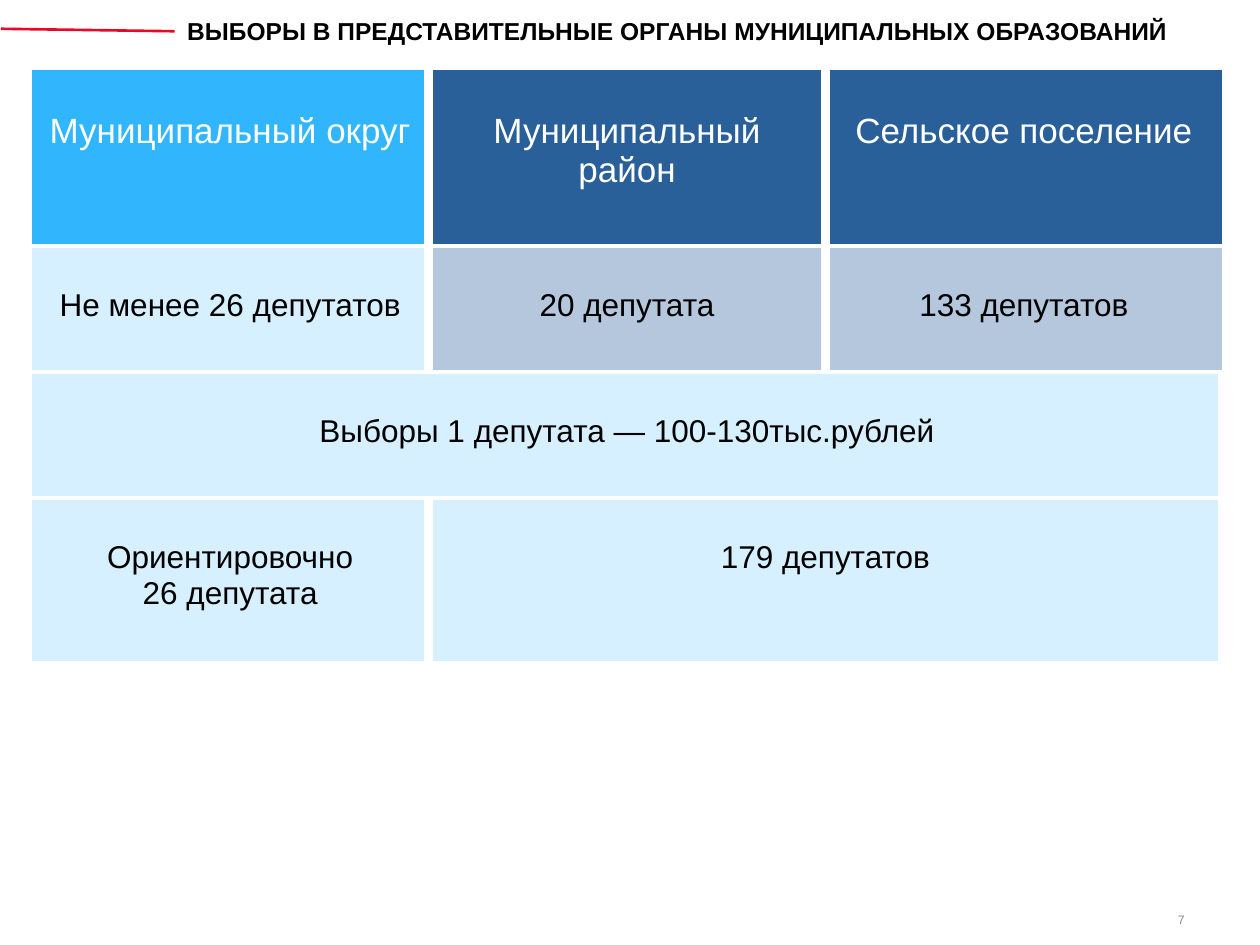
import pptx
import pptx.dml.color
import pptx.enum.text
import pptx.util
from dataclasses import dataclass
from lxml import etree
from pptx.oxml.ns import qn
from pptx.util import Cm


@dataclass(frozen=True)
class Theme:
    font: str = "Arial"
    black: str = "000000"
    white: str = "FFFFFF"
    grey: str = "8B8B8B"
    red: str = "E70927"
    bright: str = "31B6FD"
    navy: str = "2A6099"
    pale: str = "D6F0FF"
    steel: str = "B4C7DC"
    title_size: float = 14
    head_size: float = 20
    body_size: float = 18
    number_size: float = 7
    rule_width: float = 1.5
    outer_border: float = 0.96
    row_border: float = 3
    column_border: float = 6


T = Theme()
ALIGN = pptx.enum.text.PP_ALIGN
ANCHOR = pptx.enum.text.MSO_ANCHOR
COLUMNS = 3
ROW_HEIGHTS = (Cm(3.56), Cm(2.54), Cm(2.54), Cm(3.3))
CELLS = (
    (0, 0, 1, "Муниципальный округ", T.bright),
    (0, 1, 1, "Муниципальный район", T.navy),
    (0, 2, 1, "Сельское поселение", T.navy),
    (1, 0, 1, "Не менее 26 депутатов", T.pale),
    (1, 1, 1, "20 депутата", T.steel),
    (1, 2, 1, "133 депутатов", T.steel),
    (2, 0, 3, "Выборы 1 депутата — 100-130тыс.рублей", T.pale),
    (3, 0, 1, "Ориентировочно\n26 депутата", T.pale),
    (3, 1, 2, "179 депутатов", T.pale),
)


def rgb(value):
    return pptx.dml.color.RGBColor.from_string(value)


def write(tf, text, size, color, align, bold=False):
    tf.text = text
    tf.word_wrap = True
    for p in tf.paragraphs:
        p.alignment = align
        p.font.name = T.font
        p.font.size = pptx.util.Pt(size)
        p.font.color.rgb = rgb(color)
        p.font.bold = bold


def set_borders(cell, row, col):
    last_row, last_col = len(ROW_HEIGHTS) - 1, COLUMNS - 1
    widths = {
        "a:lnL": T.column_border if col > 0 else T.outer_border,
        "a:lnR": T.column_border if col < last_col else T.outer_border,
        "a:lnT": T.row_border if row > 0 else T.outer_border,
        "a:lnB": T.row_border if row < last_row else T.outer_border,
    }
    tcPr = cell._tc.get_or_add_tcPr()
    for tag, width in widths.items():
        ln = etree.SubElement(tcPr, qn(tag), w=str(pptx.util.Pt(width)))
        fill = etree.SubElement(ln, qn("a:solidFill"))
        etree.SubElement(fill, qn("a:srgbClr"), val=T.white)


def add_header(s, left, top, width, height):
    rule_width = Cm(3.5)
    sp = s.shapes.title
    sp.left, sp.top = left + rule_width, top
    sp.width, sp.height = width - rule_width, height
    tf = sp.text_frame
    tf.auto_size = pptx.enum.text.MSO_AUTO_SIZE.NONE
    tf.vertical_anchor = ANCHOR.TOP
    write(tf, "ВЫБОРЫ В ПРЕДСТАВИТЕЛЬНЫЕ ОРГАНЫ МУНИЦИПАЛЬНЫХ ОБРАЗОВАНИЙ",
          T.title_size, T.black, ALIGN.LEFT, bold=True)

    rule = s.shapes.add_connector(
        pptx.enum.shapes.MSO_CONNECTOR.STRAIGHT,
        left, top + Cm(0.38), left + rule_width, top + Cm(0.43))
    rule.line.color.rgb = rgb(T.red)
    rule.line.width = pptx.util.Pt(T.rule_width)
    etree.SubElement(rule._element.spPr, qn("a:effectLst"))


def add_deputies_table(s, left, top, width):
    table = s.shapes.add_table(len(ROW_HEIGHTS), COLUMNS, left, top,
                               width, sum(ROW_HEIGHTS)).table
    table.first_row = table.horz_banding = False
    for column in table.columns:
        column.width = width // COLUMNS
    for row, height in zip(table.rows, ROW_HEIGHTS):
        row.height = height

    for row, col, span, text, color in CELLS:
        cell = table.cell(row, col)
        if span > 1:
            cell.merge(table.cell(row, col + span - 1))
        set_borders(cell, row, col)
        cell.fill.solid()
        cell.fill.fore_color.rgb = rgb(color)
        cell.margin_top = Cm(0.85)
        is_head = row == 0
        write(cell.text_frame, text,
              T.head_size if is_head else T.body_size,
              T.white if is_head else T.black, ALIGN.CENTER)


def add_page_number(s, left, top, width, height):
    tf = s.shapes.add_textbox(left, top, width, height).text_frame
    tf.vertical_anchor = ANCHOR.MIDDLE
    write(tf, "7", T.number_size, T.grey, ALIGN.RIGHT)


def main():
    prs = pptx.Presentation()
    prs.slide_width, prs.slide_height = Cm(25.4), Cm(19.05)
    s = prs.slides.add_slide(prs.slide_layouts.get_by_name("Title Only"))
    add_header(s, Cm(0.02), Cm(0.2), Cm(25.38), Cm(0.85))
    add_deputies_table(s, Cm(0.64), Cm(1.4), Cm(24))
    add_page_number(s, Cm(18.2), Cm(18.23), Cm(5.93), Cm(0.6))
    prs.save("out.pptx")


if __name__ == "__main__":
    main()
